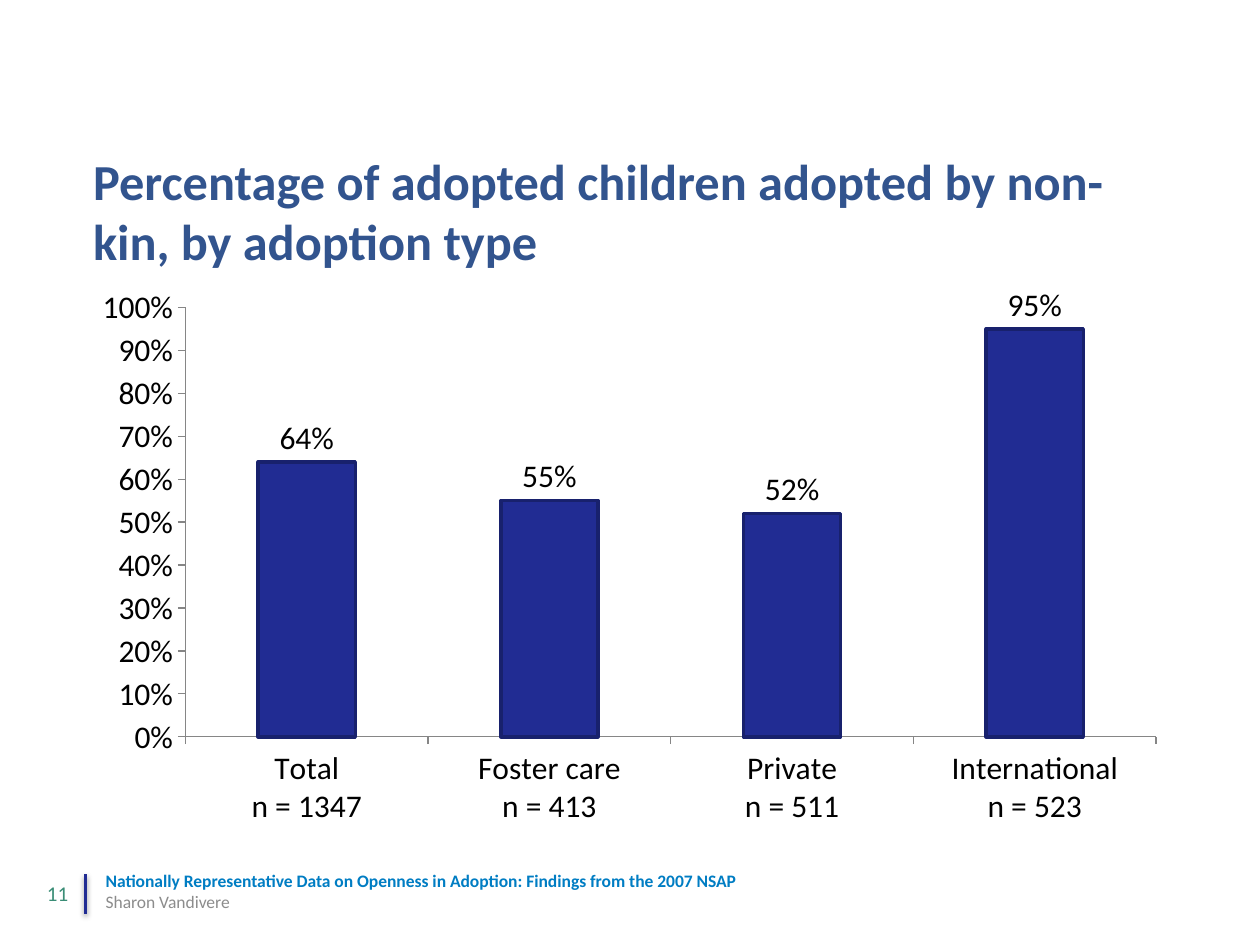
from lxml import etree
from pptx import Presentation
from pptx.chart.data import CategoryChartData
from pptx.dml.color import RGBColor
from pptx.enum.chart import XL_CHART_TYPE, XL_LABEL_POSITION, XL_TICK_MARK
from pptx.enum.shapes import MSO_CONNECTOR
from pptx.enum.text import MSO_ANCHOR, PP_ALIGN
from pptx.oxml.ns import qn
from pptx.util import Inches, Pt

COLUMNS = XL_CHART_TYPE.COLUMN_CLUSTERED
LABEL_ABOVE = XL_LABEL_POSITION.OUTSIDE_END
TICK_OUTSIDE = XL_TICK_MARK.OUTSIDE
STRAIGHT = MSO_CONNECTOR.STRAIGHT
TOP, MIDDLE, BOTTOM = MSO_ANCHOR.TOP, MSO_ANCHOR.MIDDLE, MSO_ANCHOR.BOTTOM
LEFT, RIGHT = PP_ALIGN.LEFT, PP_ALIGN.RIGHT

FONT = "Calibri"
COLORS = {
    "title": "32548E",
    "bar": "212C93",
    "bar_edge": "18216D",
    "axis": "868686",
    "text": "000000",
    "talk": "007DC3",
    "speaker": "8C8C8C",
    "number": "3A8D76",
}
ADOPTIONS = [
    ("Total", 1347, 0.64),
    ("Foster care", 413, 0.55),
    ("Private", 511, 0.52),
    ("International", 523, 0.95),
]


def rgb(name):
    return RGBColor.from_string(COLORS[name])


def style_font(font, size, color, bold=False):
    font.name = FONT
    font.size = Pt(size)
    font.bold = bold
    font.color.rgb = rgb(color)


def add_text(slide, left, top, width, height, lines, anchor=TOP, align=LEFT):
    """Each line is (text, size, color, bold)."""
    frame = slide.shapes.add_textbox(
        Inches(left), Inches(top), Inches(width), Inches(height)).text_frame
    frame.word_wrap = True
    frame.vertical_anchor = anchor
    for index, (text, *style) in enumerate(lines):
        paragraph = frame.add_paragraph() if index else frame.paragraphs[0]
        paragraph.text = text
        paragraph.alignment = align
        style_font(paragraph.font, *style)


def add_title(slide, left, top, width, height):
    title = "Percentage of adopted children adopted by non-kin, by adoption type"
    add_text(slide, left, top, width, height, [(title, 28.8, "title", True)])


def add_adoption_chart(slide, left, top, width, height):
    data = CategoryChartData(number_format="0%")
    data.categories = [f"{kind}\nn = {count}" for kind, count, _ in ADOPTIONS]
    data.add_series("Series 1", [share for _, _, share in ADOPTIONS])
    chart = slide.shapes.add_chart(
        COLUMNS, Inches(left), Inches(top), Inches(width), Inches(height), data).chart
    chart.has_legend = False
    chart.has_title = False
    style_font(chart.font, 18, "text")

    # Axes
    for axis in (chart.category_axis, chart.value_axis):
        axis.has_major_gridlines = False
        axis.major_tick_mark = TICK_OUTSIDE
        axis.format.line.color.rgb = rgb("axis")
        axis.format.line.width = Pt(0.75)
    shares = chart.value_axis
    shares.minimum_scale, shares.maximum_scale, shares.major_unit = 0, 1, 0.1
    shares.tick_labels.number_format = "0%"
    shares.tick_labels.number_format_is_linked = False

    # Bars and their labels
    plot = chart.plots[0]
    plot.vary_by_categories = False
    plot.gap_width = 150
    bars = plot.series[0].format
    bars.fill.solid()
    bars.fill.fore_color.rgb = rgb("bar")
    bars.line.color.rgb = rgb("bar_edge")
    bars.line.width = Pt(2)
    labels = plot.series[0].data_labels
    labels.show_value = True
    labels.number_format = "0%"
    labels.number_format_is_linked = False
    labels.position = LABEL_ABOVE
    style_font(labels.font, 18, "text")


def add_soft_shadow(connector):
    effects = etree.SubElement(connector._element.spPr, qn("a:effectLst"))
    shadow = etree.SubElement(
        effects, qn("a:outerShdw"), blurRad=str(Pt(3.1)), dist=str(Pt(1.6)),
        dir="5400000", rotWithShape="0")
    black = etree.SubElement(shadow, qn("a:srgbClr"), val="000000")
    etree.SubElement(black, qn("a:alpha"), val="38000")


def add_footer(slide, left, top, width, height):
    number_width, talk_offset, rule_offset = 0.46, 0.56, 0.5
    add_text(slide, left, top, number_width, height,
             [("11", 12, "number", False)], MIDDLE, RIGHT)
    add_text(slide, left + talk_offset, top, width - talk_offset, height, [
        ("Nationally Representative Data on Openness in Adoption: "
         "Findings from the 2007 NSAP", 10, "talk", True),
        ("Sharon Vandivere", 10, "speaker", False),
    ], BOTTOM)
    rule_x = Inches(left + rule_offset)
    rule = slide.shapes.add_connector(
        STRAIGHT, rule_x, Inches(top + 0.05), rule_x, Inches(top + 0.36))
    rule.line.color.rgb = rgb("bar")
    rule.line.width = Pt(2)
    add_soft_shadow(rule)


def main():
    deck = Presentation()
    deck.slide_width, deck.slide_height = Inches(10), Inches(7.5)
    slide = deck.slides.add_slide(deck.slide_layouts[6])
    add_footer(slide, 0.18, 6.89, 7.09, 0.4)
    add_title(slide, 0.64, 1.14, 8.71, 1.07)
    add_adoption_chart(slide, 0.64, 2.2, 8.71, 4.44)
    deck.save("out.pptx")


if __name__ == "__main__":
    main()
